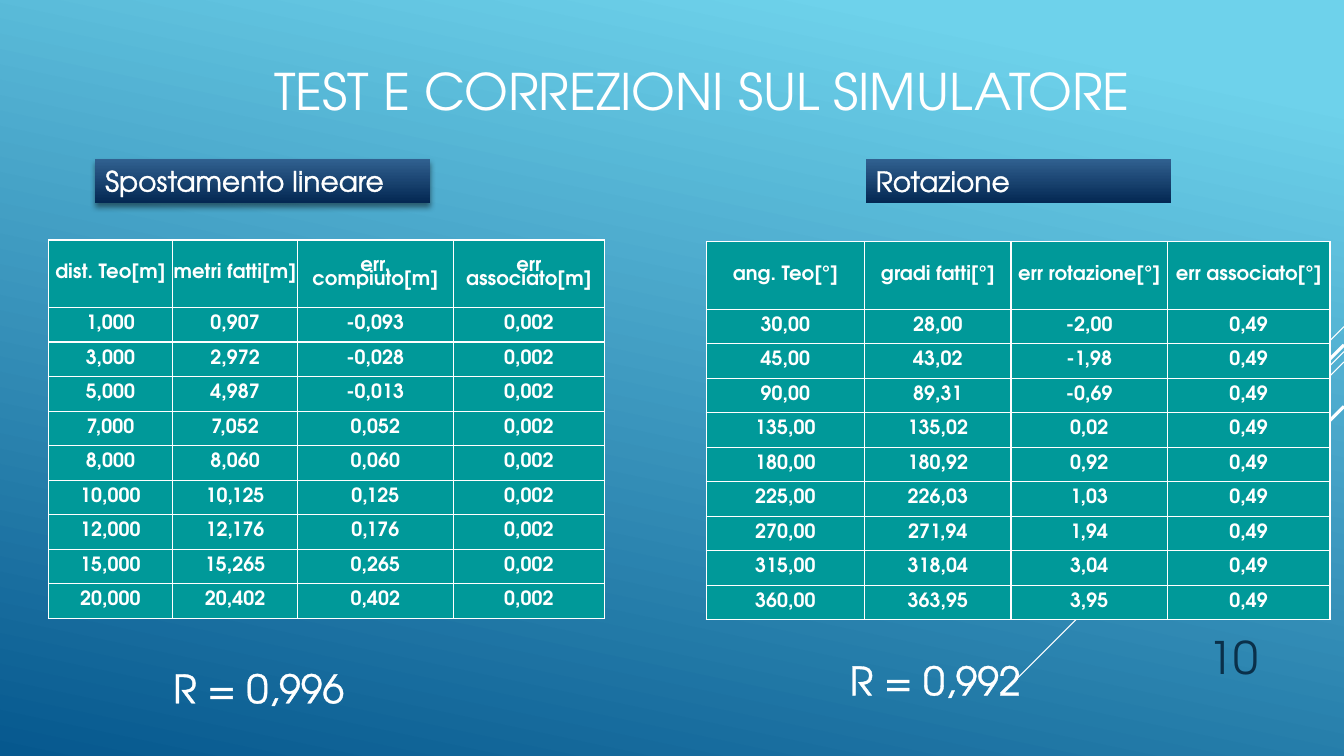
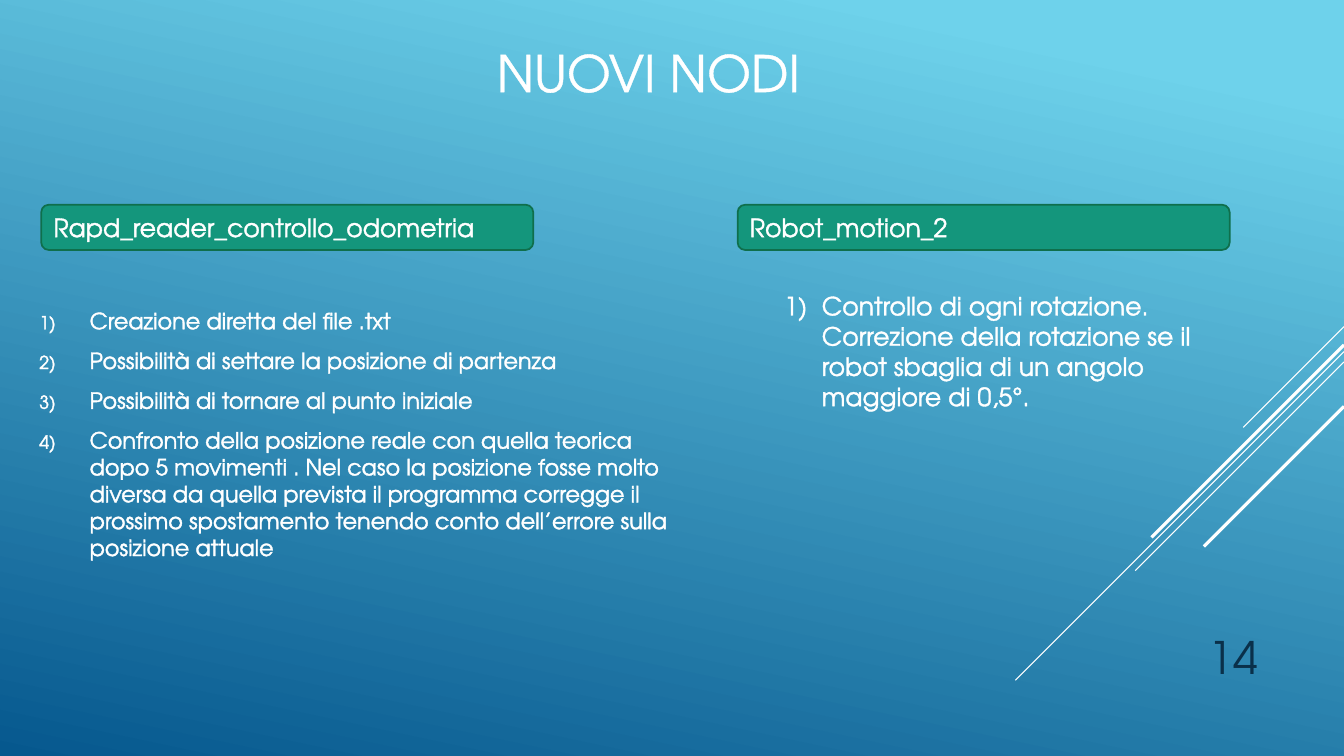
from pptx import Presentation as Deck
from pptx.dml.color import RGBColor as Rgb
from pptx.enum.shapes import MSO_CONNECTOR as Link, MSO_SHAPE as Form
from pptx.enum.text import MSO_ANCHOR as Anchor, MSO_AUTO_SIZE as Auto, PP_ALIGN as Align
from pptx.oxml import parse_xml as to_xml
from pptx.oxml.ns import nsdecls as names
from pptx.util import Cm, Pt

FONT = "TeX Gyre Adventor"
WIDE, HIGH = 33.87, 19.05
HUES = {
    "white": "FFFFFF",
    "sky": "6ED2EB",
    "sea": "06588E",
    "steel": "316190",
    "navy": "042853",
    "ink": "0A304A",
    "teal": "009999",
    "green": "14967C",
    "edge": "0F6F4C",
    "black": "000000",
}
RAYS = [
    (8.23, 2.54, 0.75),
    (8.86, 8.28, 0.75),
    (9.12, 5.26, 0.75),
    (8.69, 4.85, 2.25),
    (10.24, 3.53, 2.25),
]
PATHS = [
    (1, 0.907), (3, 2.972), (5, 4.987), (7, 7.052), (8, 8.06),
    (10, 10.125), (12, 12.176), (15, 15.265), (20, 20.402),
]
TURNS = [
    (30, 28), (45, 43.02), (90, 89.31), (135, 135.02), (180, 180.92),
    (225, 226.03), (270, 271.94), (315, 318.04), (360, 363.95),
]
STEPS = [
    "Creazione diretta del file .txt",
    "Possibilità di settare la posizione di partenza",
    "Possibilità di tornare al punto iniziale",
    "Confronto della posizione reale con quella teorica dopo 5 movimenti . "
    "Nel caso la posizione fosse molto diversa da quella prevista il programma "
    "corregge il prossimo spostamento tenendo conto dell’errore sulla posizione attuale",
]
CHECK = ("Controllo di ogni rotazione. Correzione della rotazione se il robot "
         "sbaglia di un angolo maggiore di 0,5°.")


def hue(name):
    return Rgb.from_string(HUES[name])


def node(tag, body="", **attrs):
    pairs = "".join(f' {key}="{val}"' for key, val in attrs.items())
    return to_xml(f"<a:{tag} {names('a')}{pairs}>{body}</a:{tag}>")


def paint(name):
    return f'<a:solidFill><a:srgbClr val="{HUES[name]}"/></a:solidFill>'


def blend(fill, stops, angle):
    fill.gradient()
    fill.gradient_angle = angle
    for stop, (place, name) in zip(fill.gradient_stops, stops):
        stop.position = place
        stop.color.rgb = hue(name)


def number(para, indent, scale):
    props = para._p.get_or_add_pPr()
    props.set("marL", str(Cm(indent)))
    props.set("indent", str(-Cm(indent)))
    props.append(node("buClr", f'<a:srgbClr val="{HUES["white"]}"/>'))
    props.append(node("buSzPct", val=scale * 1000))
    props.append(node("buAutoNum", type="arabicParenR"))


def write(frame, *lines, size=18, color="white", align=Align.LEFT, anchor=Anchor.TOP,
          bold=False, glow=True, grow=False, before=0, after=0, lead=1.0,
          indent=0, scale=100):
    frame.word_wrap = True
    frame.vertical_anchor = anchor
    if grow:
        frame.auto_size = Auto.SHAPE_TO_FIT_TEXT
    for i, line in enumerate(lines):
        para = frame.add_paragraph() if i else frame.paragraphs[0]
        para.alignment = align
        para.line_spacing = lead
        para.space_before, para.space_after = Pt(before), Pt(after)
        if indent:
            number(para, indent, scale)
        run = para.add_run()
        run.text = line
        font = run.font
        font.name, font.size, font.bold = FONT, Pt(size), bold
        font.color.rgb = hue(color)
        if glow:
            run._r.get_or_add_rPr().insert(0, node("ln", paint("white"), w=Pt(1.45)))


def note(slide, box, *lines, **style):
    shape = slide.shapes.add_textbox(*map(Cm, box))
    write(shape.text_frame, *lines, **style)


def ray(slide, top, run, width):
    line = slide.shapes.add_connector(
        Link.STRAIGHT, Cm(WIDE), Cm(top), Cm(WIDE - run), Cm(top + run))
    line.line.color.rgb = hue("white")
    line.line.width = Pt(width)
    line._element.spPr.append(node("effectLst"))


def plate(slide, form, box):
    shape = slide.shapes.add_shape(form, *map(Cm, box))
    shape.shadow.inherit = False
    return shape


def banner(slide, box, text, anchor, shade=False):
    shape = plate(slide, Form.RECTANGLE, box)
    blend(shape.fill, [(0, "steel"), (1, "navy")], 270)
    shape.line.fill.background()
    if shade:
        tone = f'<a:srgbClr val="{HUES["black"]}"><a:alpha val="46000"/></a:srgbClr>'
        cast = node("outerShdw", tone, blurRad=Pt(4), dist=Pt(3), dir=5400000, rotWithShape=0)
        shape._element.spPr.find(node("effectLst").tag).append(cast)
    write(shape.text_frame, text, size=20, anchor=anchor, grow=True)


def badge(slide, left, text):
    shape = plate(slide, Form.ROUNDED_RECTANGLE, (left, 5.16, 12.4, 1.14))
    shape.fill.solid()
    shape.fill.fore_color.rgb = hue("green")
    shape.line.color.rgb = hue("edge")
    shape.line.width = Pt(1.25)
    write(shape.text_frame, text, grow=True)


def grid(slide, left, top, cols, rows):
    head, row = 1.7, 0.87
    high = head + row * (len(rows) - 1)
    table = slide.shapes.add_table(
        len(rows), len(cols), Cm(left), Cm(top), Cm(sum(cols)), Cm(high)).table
    table.first_row = table.horz_banding = False
    for col, width in zip(table.columns, cols):
        col.width = Cm(width)
    for r, texts in enumerate(rows):
        table.rows[r].height = Cm(row if r else head)
        for c, text in enumerate(texts):
            fill_cell(table.cell(r, c), text)


def fill_cell(cell, text):
    cell.margin_left = cell.margin_right = cell.margin_top = Cm(0.02)
    cell.margin_bottom = 0
    cell.fill.solid()
    cell.fill.fore_color.rgb = hue("teal")
    write(cell.text_frame, text, size=14, bold=True, glow=False,
          align=Align.CENTER, lead=0.8)
    cell.vertical_anchor = Anchor.MIDDLE
    props = cell._tc.get_or_add_tcPr()
    for i, side in enumerate("LRTB"):
        props.insert(i, node("ln" + side, paint("white"), w=Pt(1)))


def tests(heads, pairs, error, places):
    def show(value):
        return f"{value:.{places}f}".replace(".", ",")

    return [heads] + [[show(v) for v in (goal, done, done - goal, error)]
                      for goal, done in pairs]


def base(deck, title, box, page, glow):
    slide = deck.slides.add_slide(deck.slide_layouts[6])
    blend(slide.background.fill, [(0.1, "sky"), (1, "sea")], 258)
    for spec_row in RAYS:
        ray(slide, *spec_row)
    note(slide, box, title, size=36, align=Align.CENTER, anchor=Anchor.MIDDLE, glow=glow)
    note(slide, (28.78, 15.49, 3.18, 1.85), page, size=32, color="ink",
         align=Align.RIGHT, anchor=Anchor.BOTTOM, glow=False)
    return slide


def trials(deck):
    slide = base(deck, "TEST E CORREZIONI SUL SIMULATORE",
                 (2.64, 0.81, 30.12, 2.95), "10", False)
    banner(slide, (2.4, 4, 8.44, 1.11), "Spostamento lineare", Anchor.TOP, shade=True)
    banner(slide, (21.82, 4, 7.69, 1.11), "Rotazione", Anchor.MIDDLE)
    heads = ["dist. Teo[m]", "metri fatti[m]", "err. compiuto[m]", "err associato[m]"]
    grid(slide, 1.22, 6.05, (3.13, 3.15, 3.92, 3.82), tests(heads, PATHS, 0.002, 3))
    heads = ["ang. Teo[°]", "gradi fatti[°]", "err rotazione[°]", "err associato[°]"]
    grid(slide, 17.8, 6.09, (3.99, 3.69, 3.94, 4.1), tests(heads, TURNS, 0.49, 2))
    note(slide, (4.11, 16.61, 6.73, 1.45), "R = 0,996", size=28, grow=True)
    note(slide, (21.16, 16.41, 6.17, 1.45), "R = 0,992", size=28, grow=True)


def nodes(deck):
    slide = base(deck, "NUOVI NODI", (4.34, 0.56, 24, 2.51), "14", True)
    badge(slide, 1.04, "Rapd_reader_controllo_odometria")
    badge(slide, 18.59, "Robot_motion_2")
    note(slide, (0.74, 6.27, 16.59, 9.32), *STEPS, size=16, anchor=Anchor.MIDDLE,
         before=3.2, after=6, indent=1.27, scale=80)
    note(slide, (19.51, 7.19, 11.48, 3.33), CHECK, grow=True, indent=0.95)


def main():
    deck = Deck()
    deck.slide_width, deck.slide_height = Cm(WIDE), Cm(HIGH)
    trials(deck)
    nodes(deck)
    deck.save("out.pptx")


if __name__ == "__main__":
    main()
